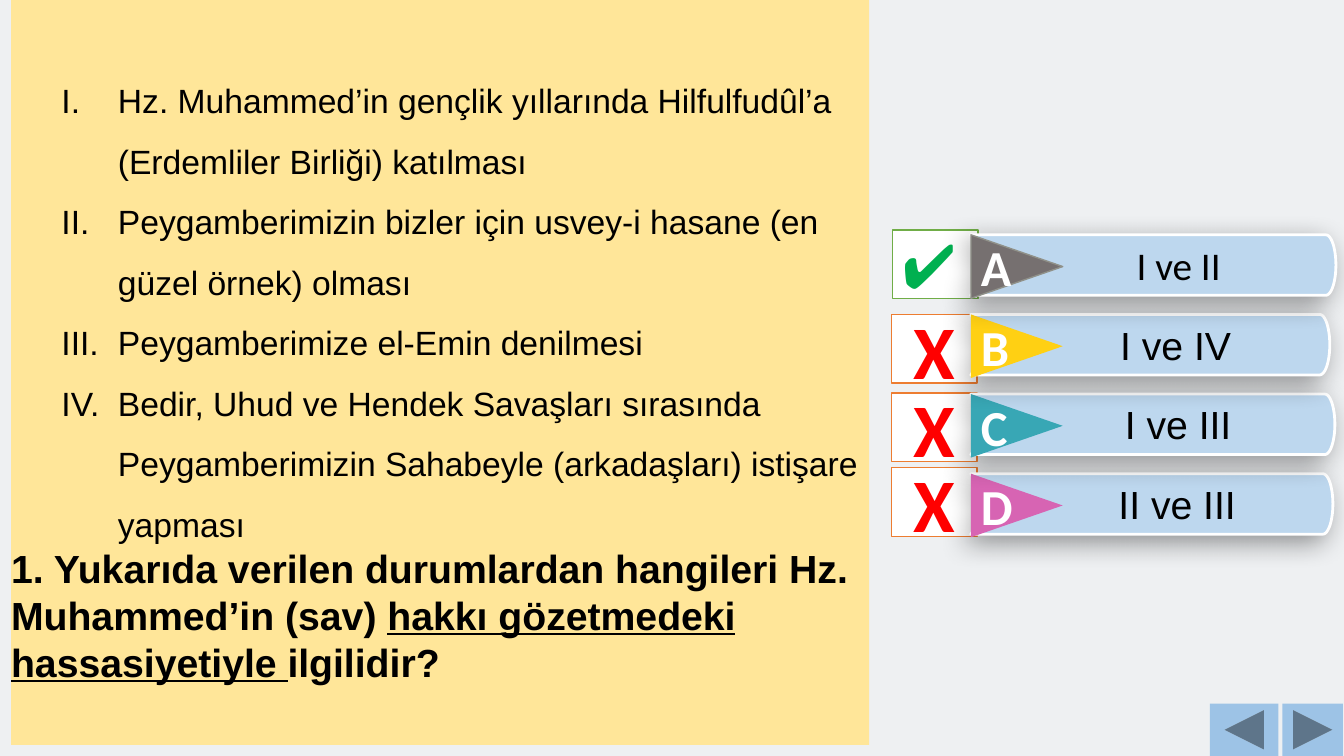
from lxml.etree import SubElement
from math import cos, pi, sin
from pptx import Presentation
from pptx.dml.color import RGBColor
from pptx.enum.shapes import MSO_SHAPE
from pptx.enum.text import MSO_ANCHOR, PP_ALIGN
from pptx.oxml.ns import qn
from pptx.util import Inches, Pt

COLORS = {
    "background": "EEF0F2", "panel": "FFE699", "banner": "BDD7EE",
    "button": "9DC3E6", "white": "FFFFFF", "black": "000000",
    "right": "00B050", "right_edge": "70AD47",
    "wrong": "FF0000", "wrong_edge": "ED7D31",
    "A": "767070", "A_edge": "909189", "B": "FFD013", "C": "38A7B5", "D": "D764B3",
}
STATEMENTS = [
    "Hz. Muhammed’in gençlik yıllarında Hilfulfudûl’a (Erdemliler Birliği) katılması",
    "Peygamberimizin bizler için usvey-i hasane (en güzel örnek) olması",
    "Peygamberimize el-Emin denilmesi",
    "Bedir, Uhud ve Hendek Savaşları sırasında Peygamberimizin Sahabeyle "
    "(arkadaşları) istişare yapması",
]
QUESTION = [
    ("1. Yukarıda verilen durumlardan hangileri Hz. Muhammed’in (sav) ", False),
    ("hakkı gözetmedeki hassasiyetiyle ", True),
    ("ilgilidir?", False),
]
OPTIONS = [
    ("A", "I ve II", "Calibri", 8.85, 2.28, 13.25),
    ("B", "I ve IV", "Arial", 8.84, 3.12, 13.19),
    ("C", "I ve III", "Arial", 8.84, 3.9, 13.24),
    ("D", "II ve III", "Arial", 8.84, 4.64, 13.22),
]
FIRST_BANNER_TOP, BANNER_PITCH = 2.33, 0.79
BANNER_LEFT, BANNER_HEIGHT = 9.63, 0.6


def rgb(name):
    return RGBColor.from_string(COLORS[name])


def paint(shape, fill, edge=None, width=1):
    shape.shadow.inherit = False
    shape.fill.solid()
    shape.fill.fore_color.rgb = rgb(fill)
    if edge:
        shape.line.color.rgb = rgb(edge)
        shape.line.width = Pt(width)
    else:
        shape.line.fill.background()


def add_block(slide, preset, left, top, width, height, fill, edge=None):
    block = slide.shapes.add_shape(
        preset, Inches(left), Inches(top), Inches(width), Inches(height))
    paint(block, fill, edge)
    return block


def style(paragraph, font, size, color, bold=False, align=PP_ALIGN.LEFT):
    paragraph.font.name = font
    paragraph.font.size = Pt(size)
    paragraph.font.bold = bold
    paragraph.font.color.rgb = rgb(color)
    paragraph.alignment = align


def write(shape, text, font, size, color, bold=False, align=PP_ALIGN.CENTER):
    frame = shape.text_frame
    frame.word_wrap = True
    frame.vertical_anchor = MSO_ANCHOR.MIDDLE
    frame.text = text
    style(frame.paragraphs[0], font, size, color, bold, align)
    return frame.paragraphs[0]


def indent(paragraph, margin, first_line=0):
    paragraph.level = 1
    properties = paragraph._p.get_or_add_pPr()
    properties.set("marL", str(Inches(margin)))
    properties.set("indent", str(Inches(first_line)))
    return properties


def cast_shadow(shape):
    effects = shape._element.spPr.find(qn("a:effectLst"))
    shadow = SubElement(effects, qn("a:outerShdw"), blurRad=str(Pt(20)),
                        dist=str(Pt(7)), dir=str(135 * 60000), rotWithShape="0")
    tint = SubElement(shadow, qn("a:srgbClr"), val=COLORS["black"])
    SubElement(tint, qn("a:alpha"), val="40000")


def add_mark(slide, left, top, correct):
    kind = "right" if correct else "wrong"
    mark = add_block(slide, MSO_SHAPE.RECTANGLE, left, top, 0.85, 0.68,
                     "white", kind + "_edge")
    if correct:
        write(mark, "✔", "Calibri", 44, kind, align=PP_ALIGN.LEFT)
    else:
        write(mark, "X", "Calibri", 54, kind, bold=True)


def add_banner(slide, top, right, answer, font):
    half, cap, steps = BANNER_HEIGHT / 2, 0.1, 24
    angles = [-pi / 2 + pi * step / steps for step in range(steps + 1)]
    outline = [(right - cap + cap * cos(a), top + half + half * sin(a)) for a in angles]
    outline += [(BANNER_LEFT, top + BANNER_HEIGHT), (BANNER_LEFT + 0.18, top + half)]
    builder = slide.shapes.build_freeform(Inches(BANNER_LEFT), Inches(top))
    builder.add_line_segments([(Inches(x), Inches(y)) for x, y in outline], close=True)
    banner = builder.convert_to_shape()
    paint(banner, "banner", "white", 2)
    cast_shadow(banner)
    indent(write(banner, answer, font, 28, "black"), 0.5)


def add_pointer(slide, top, letter):
    pointer = add_block(slide, MSO_SHAPE.ISOSCELES_TRIANGLE, 9.77, top, 0.63, 0.91,
                        letter, "A_edge" if letter == "A" else None)
    pointer.rotation = 90
    write(pointer, letter, "Calibri", 36, "white", bold=True)
    pointer.text_frame._txBody.bodyPr.set("vert", "vert270")


def add_question(slide):
    panel = add_block(slide, MSO_SHAPE.RECTANGLE, 0.11, 0, 8.51, 7.39, "panel")
    frame = panel.text_frame
    frame.word_wrap = True
    frame.vertical_anchor = MSO_ANCHOR.MIDDLE
    frame.margin_left = frame.margin_right = frame.margin_top = frame.margin_bottom = 0
    frame.text = "\n".join(STATEMENTS)
    for statement in frame.paragraphs:
        style(statement, "Arial", 24, "black")
        statement.line_spacing = 1.5
        properties = indent(statement, 1.06, -0.56)
        numbering = SubElement(properties, qn("a:buAutoNum"), type="romanUcPeriod")
        properties.find(qn("a:defRPr")).addprevious(numbering)
    question = frame.add_paragraph()
    style(question, "Arial", 28, "black", bold=True)
    for text, underlined in QUESTION:
        run = question.add_run()
        run.text = text
        run.font.underline = underlined


def main():
    deck = Presentation()
    deck.slide_width, deck.slide_height = Inches(13.33), Inches(7.5)
    slide = deck.slides.add_slide(deck.slide_layouts[6])
    slide.background.fill.solid()
    slide.background.fill.fore_color.rgb = rgb("background")
    for row, option in reversed(list(enumerate(OPTIONS))):
        letter, answer, font, mark_left, mark_top, right = option
        top = FIRST_BANNER_TOP + row * BANNER_PITCH
        add_mark(slide, mark_left, mark_top, letter == "A")
        add_banner(slide, top, right, answer, font)
        add_pointer(slide, top - 0.14, letter)
    add_block(slide, MSO_SHAPE.ACTION_BUTTON_BACK_OR_PREVIOUS,
              12, 6.98, 0.68, 0.52, "button")
    add_block(slide, MSO_SHAPE.ACTION_BUTTON_FORWARD_OR_NEXT,
              12.72, 6.98, 0.6, 0.52, "button")
    add_question(slide)
    deck.save("out.pptx")


if __name__ == "__main__":
    main()
